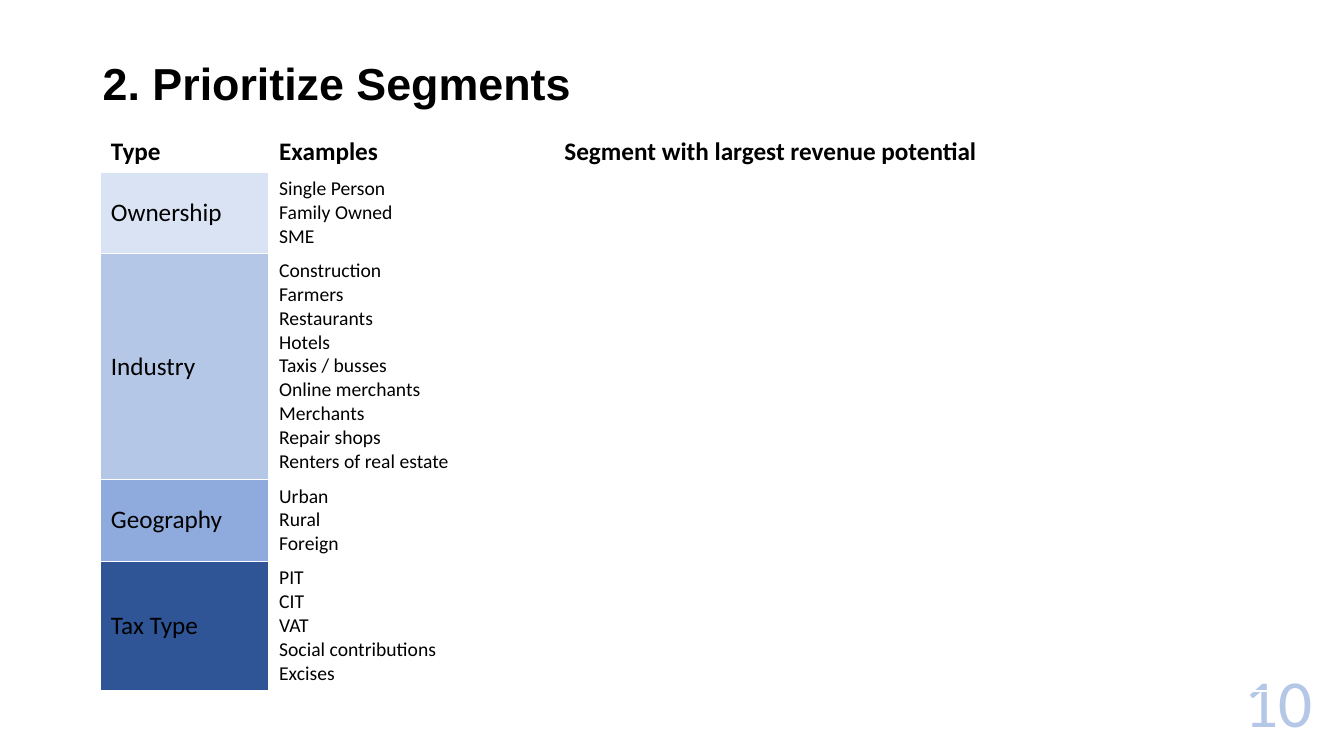
from lxml import etree
from pptx import Presentation
from pptx.dml.color import RGBColor
from pptx.enum.text import MSO_ANCHOR, MSO_AUTO_SIZE, PP_ALIGN
from pptx.oxml.ns import qn
from pptx.util import Pt

LEFT, RIGHT = PP_ALIGN.LEFT, PP_ALIGN.RIGHT
TOP, MIDDLE = MSO_ANCHOR.TOP, MSO_ANCHOR.MIDDLE
NO_FIT = MSO_AUTO_SIZE.NONE

HEADS = ["Type", "Examples", "Segment with largest revenue potential"]
WIDTHS = [120.2, 203.8, 510.5]
HEAD_H, LINE_H, PAD = 29.2, 17.1, 7.2
SEGMENTS = [
    ("Ownership", "DAE3F3", ["Single Person", "Family Owned", "SME"]),
    ("Industry", "B4C7E7", ["Construction", "Farmers", "Restaurants", "Hotels",
                            "Taxis / busses", "Online merchants", "Merchants",
                            "Repair shops", "Renters of real estate"]),
    ("Geography", "8FAADC", ["Urban", "Rural", "Foreign"]),
    ("Tax Type", "2F5597", ["PIT", "CIT", "VAT", "Social contributions", "Excises"]),
]


def rgb(code):
    return RGBColor.from_string(code)


class Deck:
    """Holds the style and the current slide."""
    font, head_font = "Calibri", "Arial"
    ink, pale, edge = "000000", "B4C7E7", "FFFFFF"

    def __init__(self, slide):
        self.slide = slide

    def label(self, frame, text, size, color=None, bold=False, font=None, align=LEFT):
        frame.text = text
        for para in frame.paragraphs:
            para.alignment = align
            para.font.name = font or self.font
            para.font.size = Pt(size)
            para.font.bold = bold
            para.font.color.rgb = rgb(color or self.ink)

    def title(self, text, x, y, w, h):
        shape = self.slide.shapes.title
        shape.left, shape.top, shape.width, shape.height = Pt(x), Pt(y), Pt(w), Pt(h)
        frame = shape.text_frame
        frame.auto_size = NO_FIT
        frame.vertical_anchor = MIDDLE
        self.label(frame, text, 32, bold=True, font=self.head_font)
        frame.paragraphs[0].line_spacing = 0.9

    def number(self, text, x, y, w, h):
        frame = self.slide.shapes.add_textbox(Pt(x), Pt(y), Pt(w), Pt(h)).text_frame
        frame.word_wrap = True
        frame.vertical_anchor = MIDDLE
        self.label(frame, text, 48, self.pale, align=RIGHT)

    def table(self, x, y, widths, heights):
        frame = self.slide.shapes.add_table(
            len(heights), len(widths), Pt(x), Pt(y), Pt(sum(widths)), Pt(sum(heights)))
        grid = frame.table
        grid.first_row = grid.horz_banding = False
        for col, width in zip(grid.columns, widths):
            col.width = Pt(width)
        for row, height in zip(grid.rows, heights):
            row.height = Pt(height)
        for cell in grid.iter_cells():
            cell.fill.background()
            self.border(cell)
        return grid

    def border(self, cell):
        props = cell._tc.get_or_add_tcPr()
        for i, side in enumerate(("a:lnL", "a:lnR", "a:lnT", "a:lnB")):
            line = etree.Element(qn(side), w=str(Pt(1)))
            fill = etree.SubElement(line, qn("a:solidFill"))
            etree.SubElement(fill, qn("a:srgbClr"), val=self.edge)
            props.insert(i, line)

    def cell(self, cell, text, size, bold=False, fill=None, anchor=TOP):
        self.label(cell.text_frame, text, size, bold=bold)
        cell.vertical_anchor = anchor
        if fill:
            cell.fill.solid()
            cell.fill.fore_color.rgb = rgb(fill)


def main():
    prs = Presentation()
    prs.slide_width, prs.slide_height = Pt(960), Pt(540)
    deck = Deck(prs.slides.add_slide(prs.slide_layouts[5]))

    # Title and page number
    deck.title("2. Prioritize Segments", 66.2, 28.8, 434.2, 64.8)
    deck.number("10", 860.4, 472.3, 84.2, 56.9)

    # Segment table: each row is as tall as its list of examples
    heights = [HEAD_H] + [LINE_H * len(items) + PAD for _, _, items in SEGMENTS]
    grid = deck.table(72, 93.6, WIDTHS, heights)
    for col, head in enumerate(HEADS):
        deck.cell(grid.cell(0, col), head, 18, bold=True)
    for row, (name, fill, items) in enumerate(SEGMENTS, 1):
        deck.cell(grid.cell(row, 0), name, 18, fill=fill, anchor=MIDDLE)
        deck.cell(grid.cell(row, 1), "\n".join(items), 14)

    prs.save("out.pptx")


if __name__ == "__main__":
    main()
